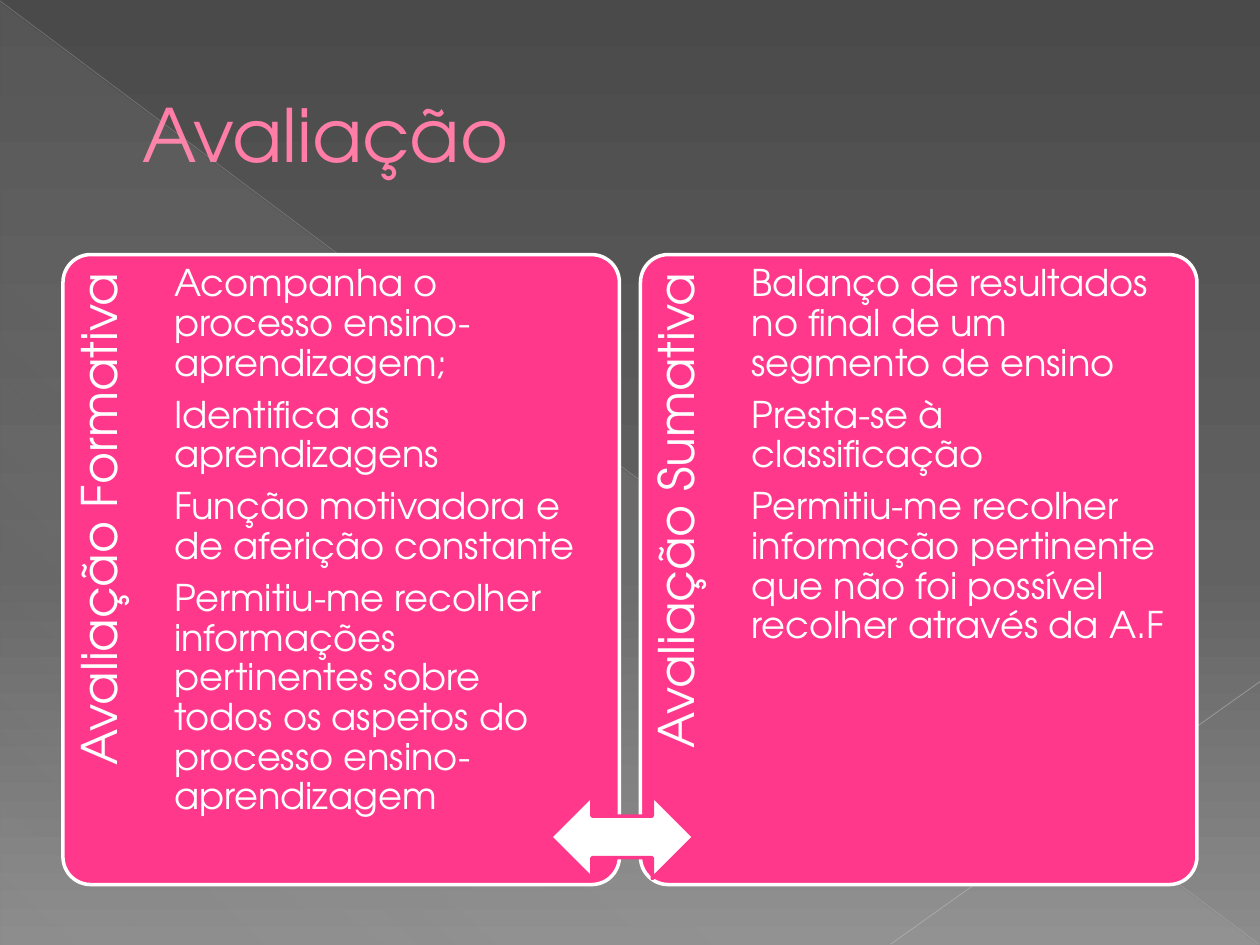
from dataclasses import dataclass

from pptx import Presentation
from pptx.dml.color import RGBColor
from pptx.enum.shapes import MSO_CONNECTOR, MSO_SHAPE
from pptx.enum.text import MSO_ANCHOR, MSO_AUTO_SIZE, PP_ALIGN
from pptx.oxml.ns import qn
from pptx.oxml.xmlchemy import OxmlElement
from pptx.util import Pt

TITLE_ONLY = 5
ROUNDED = MSO_SHAPE.ROUNDED_RECTANGLE
TRIANGLE = MSO_SHAPE.RIGHT_TRIANGLE
DOUBLE_ARROW = MSO_SHAPE.LEFT_RIGHT_ARROW
STRAIGHT = MSO_CONNECTOR.STRAIGHT
LEFT, RIGHT = PP_ALIGN.LEFT, PP_ALIGN.RIGHT


@dataclass(frozen=True)
class Theme:
    font: str = "TeX Gyre Adventor"
    title_size: int = 42
    heading_size: int = 28
    body_size: int = 21
    title: str = "FF7DA7"
    title_edge: str = "B12761"
    card: str = "FF388C"
    light: str = "FFFFFF"
    veil: str = "D2D2D2"
    background: tuple = ((0, "4A4A4A", 100), (60, "626262", 100), (100, "8C8C8C", 100))


THEME = Theme()
CARD_TOP, CARD_WIDTH, CARD_HEIGHT = 145.5, 318, 360
CARDS = [
    (36, "Avaliação Formativa", [
        "Acompanha o processo ensino-aprendizagem;",
        "Identifica as aprendizagens",
        "Função motivadora e de aferição constante",
        "Permitiu-me recolher informações pertinentes sobre todos os aspetos "
        "do processo ensino-aprendizagem",
    ]),
    (366, "Avaliação Sumativa", [
        "Balanço de resultados no final de um segmento de ensino",
        "Presta-se à classificação",
        "Permitiu-me recolher informação pertinente que não foi possível "
        "recolher através da A.F",
    ]),
]


def points(*values):
    return [Pt(value) for value in values]


def add_child(parent, tag, **attributes):
    child = OxmlElement(tag)
    for name, value in attributes.items():
        child.set(name, str(value))
    parent.append(child)
    return child


def add_color(parent, color, opacity=100):
    node = add_child(parent, "a:srgbClr", val=color)
    if opacity < 100:
        add_child(node, "a:alpha", val=opacity * 1000)


def set_gradient(fill, element, stops, angle):
    """Give the fill held in element its (position, colour, opacity) stops, in percent."""
    fill.gradient()
    gradient = next(element.iter(qn("a:gradFill")))
    stop_list = gradient.find(qn("a:gsLst"))
    for stop in list(stop_list):
        stop_list.remove(stop)
    for position, color, opacity in stops:
        add_color(add_child(stop_list, "a:gs", pos=position * 1000), color, opacity)
    gradient.find(qn("a:lin")).set("ang", str(angle * 60000))


def add_line(page, start, end, color, width, opacity):
    line = page.shapes.add_connector(STRAIGHT, *points(*start, *end))
    line.line.width = Pt(width)
    line.line.color.rgb = RGBColor.from_string(color)
    node = next(line.element.spPr.iter(qn("a:srgbClr")))
    add_child(node, "a:alpha", val=opacity * 1000)
    add_child(line.element.spPr, "a:effectLst")


def add_figure(page, kind, area, fill, edge):
    figure = page.shapes.add_shape(kind, *points(*area))
    figure.shadow.inherit = False
    figure.fill.solid()
    figure.fill.fore_color.rgb = RGBColor.from_string(fill)
    figure.line.color.rgb = RGBColor.from_string(edge)
    figure.line.width = Pt(2)
    return figure


def add_span(para, text, size, color):
    span = para.add_run()
    span.text = text
    span.font.name = THEME.font
    span.font.size = Pt(size)
    span.font.color.rgb = RGBColor.from_string(color)
    return span


def add_text(page, area, texts, size, align=LEFT, insets=(0, 6, 0, 0)):
    box = page.shapes.add_textbox(*points(*area))
    frame = box.text_frame
    frame.word_wrap = True
    (frame.margin_left, frame.margin_top,
     frame.margin_right, frame.margin_bottom) = points(*insets)
    for index, text in enumerate(texts):
        para = frame.add_paragraph() if index else frame.paragraphs[0]
        para.alignment = align
        para.line_spacing = 0.9
        para.space_after = Pt(7)
        add_span(para, text, size, THEME.light)
    return box


def add_backdrop(page):
    set_gradient(page.background.fill, page.element, THEME.background, 90)
    triangle = page.shapes.add_shape(TRIANGLE, *points(0.5, 1.5, 718.5, 538.5))
    triangle.shadow.inherit = False
    triangle.line.fill.background()
    veil = [(0, THEME.veil, 10), (70, THEME.veil, 8), (100, THEME.veil, 1)]
    set_gradient(triangle.fill, triangle.element.spPr, veil, 133)
    add_line(page, (0, 0.5), (719.5, 539.5), "BFBFBF", 0.39, 35)
    add_line(page, (720, 389.5), (509, 539.5), "C6C6C6", 0.47, 45)


def set_title(page, text):
    title = page.shapes.title
    title.left, title.top, title.width, title.height = points(36, 21, 648, 110)
    frame = title.text_frame
    frame.auto_size = MSO_AUTO_SIZE.NONE
    frame.vertical_anchor = MSO_ANCHOR.MIDDLE
    para = frame.paragraphs[0]
    para.alignment = LEFT
    properties = para._p.get_or_add_pPr()
    properties.set("marL", str(Pt(38)))
    properties.set("indent", "0")
    span = add_span(para, text, THEME.title_size, THEME.title)
    edge = OxmlElement("a:ln")
    edge.set("w", str(Pt(0.5)))
    add_color(add_child(edge, "a:solidFill"), THEME.title_edge)
    span.font._element.insert(0, edge) if hasattr(span.font, "_element") else \
        span._r.get_or_add_rPr().insert(0, edge)


def add_card(page, left, heading):
    """Draw a rounded panel with its heading turned to read upwards."""
    area = (left, CARD_TOP, CARD_WIDTH, CARD_HEIGHT)
    card = add_figure(page, ROUNDED, area, THEME.card, THEME.light)
    card.adjustments[0] = 0.05
    box = add_text(page, (left - 116, 261.5, 295, 63.5), [heading],
                   THEME.heading_size, RIGHT, (0, 7, 10, 0))
    box.rotation = 270


def main():
    deck = Presentation()
    deck.slide_width, deck.slide_height = points(720, 540)
    page = deck.slides.add_slide(deck.slide_layouts[TITLE_ONLY])
    add_backdrop(page)
    set_title(page, "Avaliação")
    for left, heading, _ in CARDS:
        add_card(page, left, heading)
    add_figure(page, DOUBLE_ARROW, (314.5, 454.5, 82, 47.5), THEME.light, THEME.card)
    for left, _, texts in CARDS:
        add_text(page, (left + 63.5, CARD_TOP, 237, CARD_HEIGHT), texts, THEME.body_size)
    deck.save("out.pptx")


if __name__ == "__main__":
    main()
